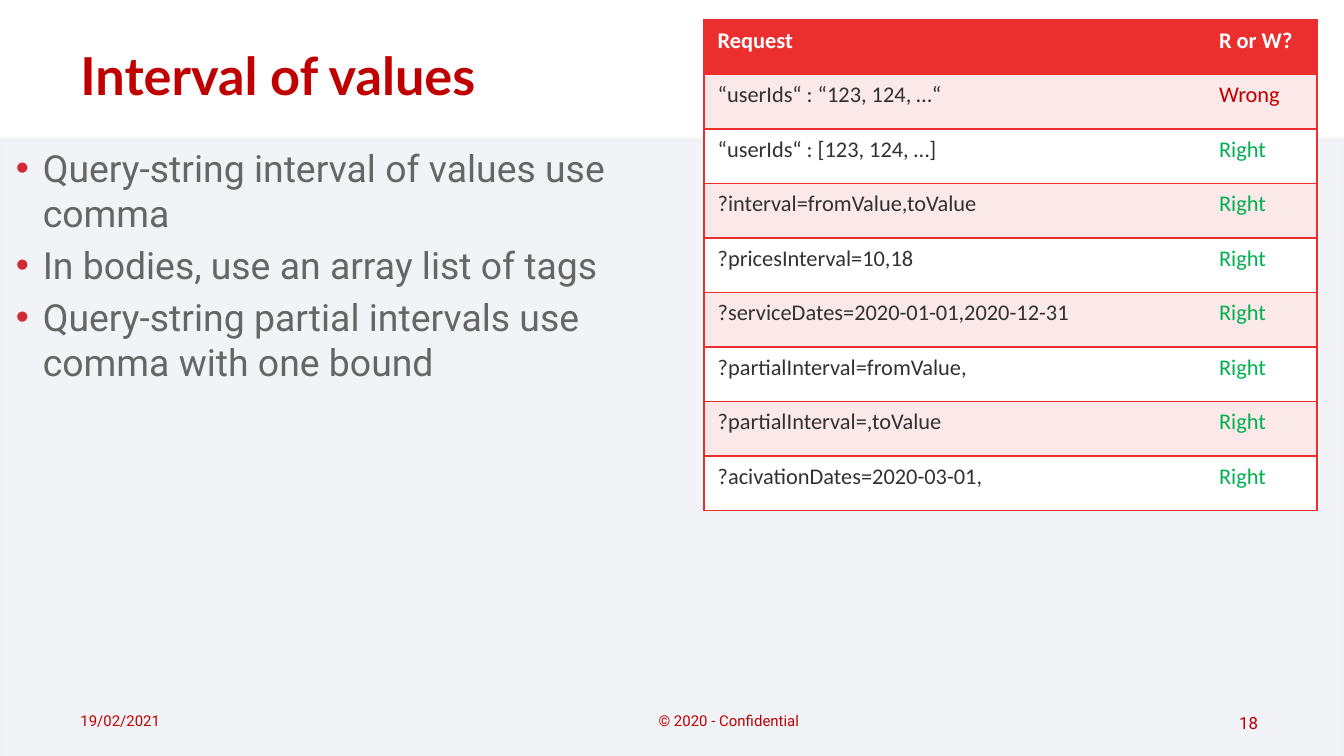
import pptx
import pptx.dml.color
import pptx.enum.shapes
import pptx.enum.text
import pptx.oxml
import pptx.oxml.ns
import pptx.util
from pptx.util import Inches

ALIGN = pptx.enum.text.PP_ALIGN
ANCHOR = pptx.enum.text.MSO_ANCHOR
NS = pptx.oxml.ns.nsdecls("a")


class Theme:
    accent, right, bullet = "C00000", "00B050", "D12A32"
    body, cell, white = "666666", "313131", "FFFFFF"
    table, band, panel, edge = "EB2F2F", "FBE8E8", "7B8DB3", "EBEBEB"
    title = {"name": "Lato", "size": 28, "bold": True}
    points = {"name": "Roboto", "size": 20}
    footer = {"name": "Roboto", "size": 8}
    number = {"name": "Roboto", "size": 9}
    heading = {"name": "Calibri", "size": 12, "bold": True}
    entry = {"name": "Calibri", "size": 12, "bold": False}


class SlideBuilder:
    """Holds the theme and the current slide and adds each kind of element."""

    def __init__(self, slide, theme):
        self.slide, self.theme = slide, theme

    def color(self, value):
        return pptx.dml.color.RGBColor.from_string(value)

    def style(self, font, values, color):
        for key, value in values.items():
            setattr(font, key, pptx.util.Pt(value) if key == "size" else value)
        font.color.rgb = self.color(color)

    def panel(self, box, opacity):
        band = self.slide.shapes.add_shape(
            pptx.enum.shapes.MSO_SHAPE.RECTANGLE, *map(Inches, box))
        band.shadow.inherit = False
        band.line.width = pptx.util.Pt(2)
        band.line.fill.solid()
        for fill, value in ((band.fill, self.theme.panel), (band.line.fill, self.theme.edge)):
            fill.solid()
            fill.fore_color.rgb = self.color(value)
        for tint in band._element.spPr.iter(pptx.oxml.ns.qn("a:srgbClr")):
            tint.append(pptx.oxml.parse_xml(f'<a:alpha {NS} val="{opacity * 1000}"/>'))

    def text(self, box, lines, values, color, bullet=False, align=ALIGN.LEFT, **frame_format):
        frame = self.slide.shapes.add_textbox(*map(Inches, box)).text_frame
        frame_format = {"word_wrap": True, "vertical_anchor": ANCHOR.MIDDLE} | frame_format
        for key, value in frame_format.items():
            setattr(frame, key, value)
        for index, line in enumerate(lines):
            paragraph = frame.add_paragraph() if index else frame.paragraphs[0]
            paragraph.text = line
            paragraph.alignment = align
            if index:
                paragraph.space_before = pptx.util.Pt(4)
            if bullet:
                self.bullet(paragraph)
            self.style(paragraph.runs[0].font, values, color)

    def bullet(self, paragraph):
        properties = paragraph._p.get_or_add_pPr()
        for key, value in {"marL": Inches(0.2), "indent": -Inches(0.2)}.items():
            properties.set(key, str(value))
        for mark in (f'<a:buClr {NS}><a:srgbClr val="{self.theme.bullet}"/></a:buClr>',
                     f'<a:buFont {NS} typeface="Arial"/>',
                     f'<a:buChar {NS} char="•"/>'):
            properties.append(pptx.oxml.parse_xml(mark))

    def borders(self, cell, outer_side):
        properties = cell._tc.get_or_add_tcPr()
        for index, side in enumerate("LRTB"):
            paint = (f'<a:solidFill><a:srgbClr val="{self.theme.table}"/></a:solidFill>'
                     if side in outer_side + "TB" else "<a:noFill/>")
            properties.insert(index, pptx.oxml.parse_xml(
                f'<a:ln{side} {NS} w="12700">{paint}</a:ln{side}>'))

    def table(self, box, widths, rows):
        theme = self.theme
        grid = self.slide.shapes.add_table(len(rows), len(widths), *map(Inches, box)).table
        for column, width in zip(grid.columns, widths):
            column.width = Inches(width)
        verdict_colors = {"Wrong": theme.accent, "Right": theme.right}
        for r, row in enumerate(rows):
            fill = (theme.band if r % 2 else theme.white) if r else theme.table
            for c, words in enumerate(row):
                cell = grid.cell(r, c)
                cell.text = words
                cell.fill.solid()
                cell.fill.fore_color.rgb = self.color(fill)
                self.borders(cell, "LR"[c])
                color = verdict_colors.get(words, theme.cell) if r else theme.white
                self.style(cell.text_frame.paragraphs[0].runs[0].font,
                           theme.entry if r else theme.heading, color)


def main():
    deck = pptx.Presentation()
    deck.slide_width, deck.slide_height = Inches(10), Inches(5.625)
    theme = Theme()
    page = SlideBuilder(deck.slides.add_slide(deck.slide_layouts[6]), theme)

    page.panel((0, 1.03, 10, 4.63), opacity=10)
    page.text((9.08, 5.25, 0.42, 0.25), ["18"], theme.number, theme.accent,
              align=ALIGN.CENTER, word_wrap=False)
    page.text((0.5, 0.1, 9, 0.91), ["Interval of values"], theme.title, theme.accent)
    page.text((0.5, 5.21, 2.33, 0.3), ["19/02/2021"], theme.footer, theme.accent)
    page.text((3.42, 5.21, 3.17, 0.3), ["© 2020 - Confidential"], theme.footer, theme.accent,
              margin_left=Inches(1.48))
    page.text((0.02, 1, 4.98, 3.88),
              ["Query-string interval of values use comma",
               "In bodies, use an array list of tags",
               "Query-string partial intervals use comma with one bound"],
              theme.points, theme.body, bullet=True,
              vertical_anchor=ANCHOR.TOP, margin_top=Inches(0.08))

    right_requests = ["“userIds“ : [123, 124, …]", "?interval=fromValue,toValue",
                      "?pricesInterval=10,18", "?serviceDates=2020-01-01,2020-12-31",
                      "?partialInterval=fromValue,", "?partialInterval=,toValue",
                      "?acivationDates=2020-03-01,"]
    page.table((5.24, 0.15, 4.55, 3.65), (3.73, 0.83),
               [("Request", "R or W?"), ("“userIds“ : “123, 124, …“", "Wrong"),
                *((request, "Right") for request in right_requests)])
    deck.save("out.pptx")


if __name__ == "__main__":
    main()
